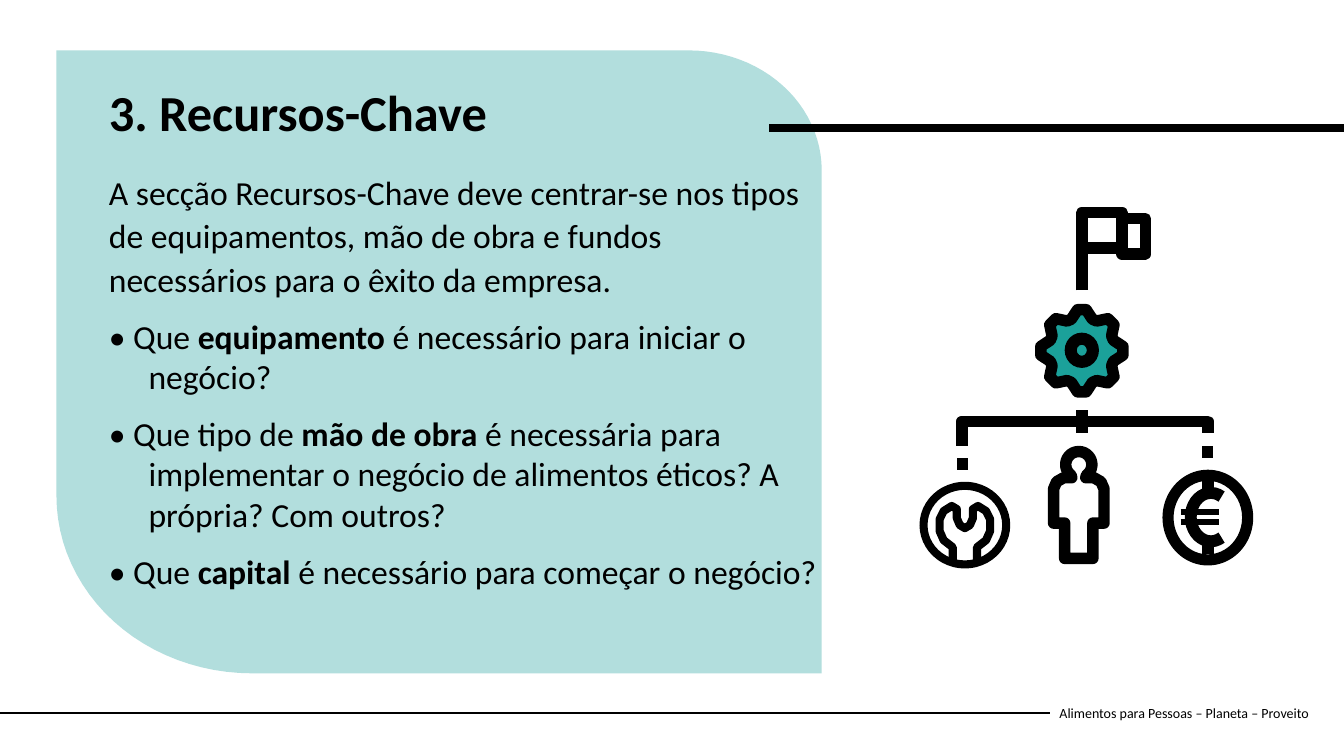
from math import cos, radians, sin

from lxml import etree
from pptx import Presentation
from pptx.dml.color import RGBColor
from pptx.enum.shapes import MSO_CONNECTOR, MSO_SHAPE
from pptx.enum.text import MSO_ANCHOR, MSO_AUTO_SIZE
from pptx.oxml.ns import qn
from pptx.util import Inches, Pt

STRAIGHT = MSO_CONNECTOR.STRAIGHT
DONUT = MSO_SHAPE.DONUT
TOP, MIDDLE = MSO_ANCHOR.TOP, MSO_ANCHOR.MIDDLE
NO_AUTOFIT = MSO_AUTO_SIZE.NONE

BLACK = RGBColor(0x00, 0x00, 0x00)
MINT = RGBColor(0xB2, 0xDE, 0xDD)
TEAL = RGBColor(0x1B, 0xA1, 0x9A)
FONT = "Calibri"
ICON_STROKE = 8.2

prs = Presentation()
prs.slide_width, prs.slide_height = Inches(13.33), Inches(7.5)
slide = prs.slides.add_slide(prs.slide_layouts[1])
shapes = slide.shapes


def arc(cx, cy, rx, ry, start, end, steps=24):
    """Points on an ellipse, in degrees clockwise from the right."""
    angles = [radians(start + (end - start) * i / steps) for i in range(steps + 1)]
    return [(cx + rx * cos(a), cy + ry * sin(a)) for a in angles]


def outline(points, stroke=ICON_STROKE, fill=None, close=True):
    """Freeform with a rounded black stroke, or none when stroke is 0."""
    start, *rest = [(Inches(x), Inches(y)) for x, y in points]
    builder = shapes.build_freeform(*start)
    builder.add_line_segments(rest, close=close)
    shape = builder.convert_to_shape()
    shape.shadow.inherit = False
    if fill is None:
        shape.fill.background()
    else:
        shape.fill.solid()
        shape.fill.fore_color.rgb = fill
    if stroke:
        shape.line.color.rgb = BLACK
        shape.line.width = Pt(stroke)
        etree.SubElement(shape.line._get_or_add_ln(), qn("a:round"))
    else:
        shape.line.fill.background()


# Mint panel with two rounded corners
outline(
    [(0.56, 0.5)]
    + arc(6.83, 1.69, 1.32, 1.19, -90, 0)
    + [(8.15, 6.68)]
    + arc(2.5, 4.92, 1.94, 1.76, 90, 180),
    stroke=0, fill=MINT,
)

# Title and body placeholders, in front of the panel
title, body = shapes.title, slide.placeholders[1]
for placeholder, box in ((body, (0.98, 1.63, 7.22, 4.38)), (title, (0.98, 0.82, 5.46, 1.09))):
    placeholder.left, placeholder.top, placeholder.width, placeholder.height = map(Inches, box)
    placeholder.text_frame.word_wrap = True
    placeholder.text_frame.auto_size = NO_AUTOFIT
    placeholder.text_frame.vertical_anchor = TOP
    placeholder.element.getparent().append(placeholder.element)

title.text_frame.text = "3. Recursos-Chave"
heading = title.text_frame.paragraphs[0]
heading.line_spacing = 0.9
heading.font.name, heading.font.size, heading.font.bold = FONT, Pt(36), True
heading.font.color.rgb = BLACK
heading._p.get_or_add_pPr().set("algn", "l")

# Each paragraph alternates regular and bold runs
resource_texts = [
    ["A secção Recursos-Chave deve centrar-se nos tipos de equipamentos, "
     "mão de obra e fundos necessários para o êxito da empresa."],
    ["• Que ", "equipamento ", "é necessário para iniciar o negócio?"],
    ["• Que tipo de ", "mão de obra ",
     "é necessária para implementar o negócio de alimentos éticos? A própria? Com outros?"],
    ["• Que ", "capital ", "é necessário para começar o negócio?"],
]
for i, pieces in enumerate(resource_texts):
    paragraph = body.text_frame.paragraphs[0] if i == 0 else body.text_frame.add_paragraph()
    paragraph.space_before = paragraph.space_after = Pt(6)
    paragraph.line_spacing = 1.07 if i == 0 else 1.0
    indent = Pt(28.35) if i else 0
    properties = paragraph._p.get_or_add_pPr()
    properties.set("marL", str(indent))
    properties.set("indent", str(-indent))
    etree.SubElement(properties, qn("a:buNone"))
    for j, piece in enumerate(pieces):
        run = paragraph.add_run()
        run.text = piece
        run.font.name, run.font.size, run.font.bold = FONT, Pt(24), j % 2 == 1
        run.font.color.rgb = BLACK

# Footer
footer = shapes.add_textbox(Inches(10.41), Inches(6.87), Inches(2.73), Inches(0.4))
footer.text_frame.word_wrap = True
footer.text_frame.vertical_anchor = MIDDLE
footer.text_frame.text = "Alimentos para Pessoas – Planeta – Proveito"
credo = footer.text_frame.paragraphs[0].runs[0]
credo.font.name, credo.font.size = FONT, Pt(10)
credo.font.color.rgb = BLACK

# Straight rules, stem of the tree and bars of the euro sign
for x1, y1, x2, y2, width in (
    (0, 7.07, 10.41, 7.07, 1.5),
    (7.63, 1.27, 13.33, 1.27, 5.5),
    (10.73, 4.07, 10.73, 4.3, ICON_STROKE),
    (11.98, 4.75, 11.98, 4.85, ICON_STROKE),
    (11.98, 5.36, 11.98, 5.5, ICON_STROKE),
    (11.71, 5.08, 12.09, 5.08, 4.3),
    (11.71, 5.18, 12.09, 5.18, 4.3),
):
    rule = shapes.add_connector(STRAIGHT, Inches(x1), Inches(y1), Inches(x2), Inches(y2))
    rule.line.color.rgb = BLACK
    rule.line.width = Pt(width)
    etree.SubElement(rule._element.spPr, qn("a:effectLst"))

# Square dashes below the outer branches
for x, y in ((9.49, 4.54), (11.92, 4.42)):
    outline([(x, y), (x + 0.11, y), (x + 0.11, y + 0.12), (x, y + 0.12)], stroke=0, fill=BLACK)

# Flag
outline([(10.73, 2.88), (10.73, 2.11), (11.13, 2.11), (11.13, 2.46), (10.73, 2.46)], close=False)
outline([(11.13, 2.17), (11.36, 2.17), (11.36, 2.52), (11.13, 2.52)])

# Gear with eight teeth
gear_x, gear_y = 10.73, 3.48
gear = []
for tooth in range(8):
    for offset, radius in ((-6, 0.41), (6, 0.41), (18.5, 0.33), (26.5, 0.33)):
        angle = radians(45 * tooth + offset)
        gear.append((gear_x + radius * cos(angle), gear_y + radius * sin(angle)))
outline(gear, fill=TEAL)

# Tree branches
outline([(9.54, 4.42), (9.54, 4.18), (11.98, 4.18), (11.98, 4.3)], close=False)

# Person: head, then the body clockwise from the left shoulder
person_x = 10.7
right_side = [(0.15, 4.74), (0.22, 4.78), (0.25, 4.85), (0.25, 5.19), (0.14, 5.19), (0.14, 5.54)]
outline(
    arc(person_x, 4.61, 0.13, 0.13, 125, 415)
    + [(person_x + 0.07, 4.74)]
    + [(person_x + dx, y) for dx, y in right_side]
    + [(person_x - dx, y) for dx, y in reversed(right_side)]
    + [(person_x - 0.07, 4.74)]
)

# Rings: gear hub, euro coin and wrench badge
for x, y, width, height, thickness in (
    (10.56, 3.3, 0.34, 0.35, 0.12),
    (11.53, 4.66, 0.9, 0.95, 0.11),
    (9.12, 4.78, 0.9, 0.86, 0.08),
):
    ring = shapes.add_shape(DONUT, Inches(x), Inches(y), Inches(width), Inches(height))
    ring.adjustments[0] = thickness / min(width, height)
    ring.shadow.inherit = False
    ring.fill.solid()
    ring.fill.fore_color.rgb = BLACK
    ring.line.fill.background()

# Euro sign curve
outline(arc(12.01, 5.13, 0.2, 0.24, 58, 302), stroke=8.5, close=False)

# Wrench, mirrored about its axis
wrench_x = 9.57
left_half = [(0.12, 5.56), (0.12, 5.43), (0.21, 5.36), (0.25, 5.27), (0.25, 5.15),
             (0.21, 5.07), (0.13, 5.02), (0.08, 5.05), (0.08, 5.14), (0.05, 5.21)]
outline(
    [(wrench_x - dx, y) for dx, y in left_half]
    + [(wrench_x, 5.24)]
    + [(wrench_x + dx, y) for dx, y in reversed(left_half)],
    stroke=5.8, close=False,
)

prs.save("out.pptx")
